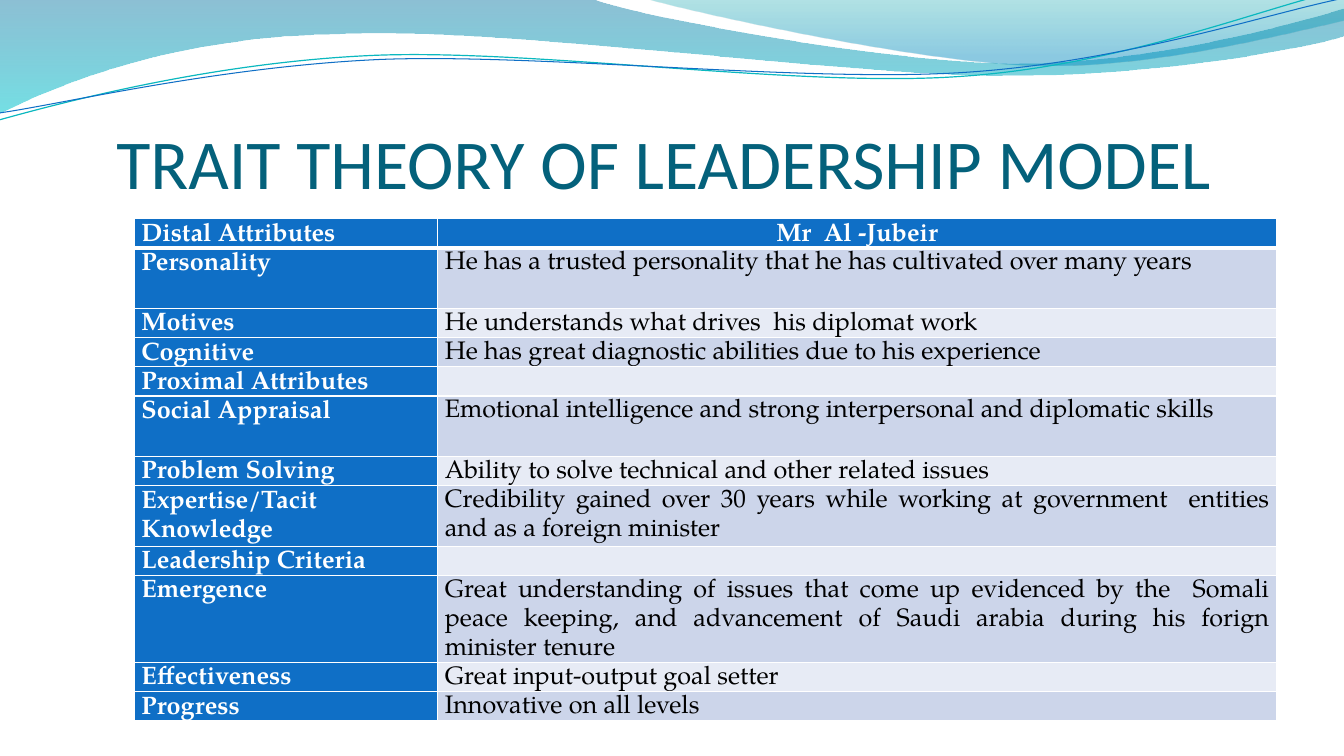
from lxml.etree import SubElement
from pptx import Presentation
from pptx.dml.color import RGBColor
from pptx.enum.text import MSO_ANCHOR, PP_ALIGN
from pptx.oxml.ns import qn
from pptx.util import Inches, Pt

WIDE, HIGH = Inches(13.333), Inches(7.5)
BLUE, WHITE, BLACK = "0F6FC6", "FFFFFF", "000000"
BANDS = ["E7EBF5", "CCD5EA"]


def tint(color, code):
    color.rgb = RGBColor.from_string(code)


def bend(wave, parts):
    """Join each three line steps that stand for a Bézier part into one curve."""
    steps = iter(list(wave.element.iter(qn("a:lnTo"))))
    for part in parts:
        first = next(steps)
        if len(part) == 6:
            first.tag = qn("a:cubicBezTo")
            for other in (next(steps), next(steps)):
                first.append(other[0])
                other.getparent().remove(other)


deck = Presentation()
deck.slide_width, deck.slide_height = WIDE, HIGH
slide = deck.slides.add_slide(deck.slide_layouts[6])
shapes = slide.shapes

# Waves: start, parts, gradient stops (place, colour, opacity) or line (colour, width)
waves = [
    ((0, 0), [(5.87, -0.01), (6.34, 0.17, 8.85, 0.63, 10.11, 0.63),
              (11.38, 0.63, 12.78, 0.26, 13.33, 0.09), (13.35, 0.36),
              (13.11, 0.44, 11.6, 0.76, 9.94, 0.75), (8.29, 0.75, 5.09, 0.28, 3.43, 0.34),
              (1.72, 0.36, 0.61, 0.83, -0.01, 1.13)],
     [(0, "0074A1", 45), (1, "00C6CF", 55)], None),
    ((6.39, -0.01), [(6.79, 0.11, 9.09, 0.62, 10.25, 0.65),
                     (11.41, 0.69, 12.82, 0.32, 13.33, 0.21), (13.33, 0)],
     [(0, "00A1A9", 30), (0.8, "008BBF", 45)], None),
    ((-0.01, 1.19), [(0.64, 1.01, 2.11, 0.62, 3.69, 0.55), (5.27, 0.48, 7.9, 0.87, 9.5, 0.76),
                     (11.1, 0.66, 12.52, 0.08, 13.31, -0.1)], None, ("0AB8BF", 0.85)),
    ((0, 1.12), [(0.63, 1.03, 2.18, 0.66, 3.78, 0.59), (5.37, 0.53, 7.96, 0.82, 9.55, 0.72),
                 (11.15, 0.62, 12.55, 0.14, 13.34, -0.02)], None, (BLUE, 0.75)),
]
for start, parts, stops, line in waves:
    pen = shapes.build_freeform(Inches(start[0]), Inches(start[1]), scale=1.0)
    spots = [(Inches(x), Inches(y)) for part in parts for x, y in zip(part[::2], part[1::2])]
    pen.add_line_segments(spots, close=bool(stops))
    wave = pen.convert_to_shape()
    bend(wave, parts)
    wave.shadow.inherit = False
    if stops:
        wave.line.fill.background()
        wave.fill.gradient()
        wave.fill.gradient_angle = 270
        for stop, (place, code, part) in zip(wave.fill.gradient_stops, stops):
            stop.position = place
            tint(stop.color, code)
        marks = wave.element.spPr.iter(qn("a:srgbClr"))
        for mark, (place, code, part) in zip(marks, stops):
            SubElement(mark, qn("a:alpha"), val=str(part * 1000))
    else:
        wave.fill.background()
        tint(wave.line.color, line[0])
        wave.line.width = Pt(line[1])

# Title
title = shapes.add_textbox(int(WIDE * 0.05), int(HIGH * 0.103), int(WIDE * 0.9), int(HIGH / 6))
frame = title.text_frame
frame.word_wrap = True
frame.vertical_anchor = MSO_ANCHOR.BOTTOM
frame.margin_left = frame.margin_right = frame.margin_bottom = 0
frame.text = "TRAIT THEORY OF LEADERSHIP MODEL "
frame.paragraphs[0].alignment = PP_ALIGN.CENTER
font = frame.paragraphs[0].runs[0].font
font.name, font.size = "Calibri", Pt(50)
tint(font.color, "04617B")

# Table: height in inches, attribute, finding
ONE, TWO, THREE = 0.29, 0.6, 0.86
rows = [
    (ONE, "Distal Attributes", "Mr  Al -Jubeir"),
    (TWO, "Personality", "He has a trusted personality that he has cultivated over many years"),
    (ONE, "Motives", "He understands what drives  his diplomat work"),
    (ONE, "Cognitive", "He has great diagnostic abilities due to his experience"),
    (ONE, "Proximal Attributes", ""),
    (TWO, "Social Appraisal",
     "Emotional intelligence and strong interpersonal and diplomatic skills"),
    (ONE, "Problem Solving", "Ability to solve technical and other related issues"),
    (TWO, "Expertise/Tacit Knowledge",
     "Credibility gained over 30 years while working at government  entities "
     "and as a foreign minister"),
    (ONE, "Leadership Criteria", ""),
    (THREE, "Emergence",
     "Great understanding of issues that come up evidenced by the  Somali peace keeping, "
     "and advancement of Saudi arabia during his forign minister tenure"),
    (ONE, "Effectiveness", "Great input-output goal setter"),
    (ONE, "Progress", "Innovative on all levels"),
]
tall = Inches(sum(row[0] for row in rows))
grid = shapes.add_table(len(rows), 2, int(WIDE * 0.1), Inches(2.17), int(WIDE * 0.85), tall).table
grid.horz_banding = False
grid.columns[0].width, grid.columns[1].width = Inches(3.01), Inches(8.32)

for r, (height, *texts) in enumerate(rows):
    grid.rows[r].height = Inches(height)
    for c, text in enumerate(texts):
        cell = grid.cell(r, c)
        head = r == 0 or c == 0
        cell.margin_left = cell.margin_right = Inches(0.07)
        cell.margin_top = cell.margin_bottom = 0
        props = cell._tc.get_or_add_tcPr()
        for side in "LRTB":
            thick = 3 if (r, side) in ((0, "B"), (1, "T")) else 1
            edge = SubElement(props, qn("a:ln" + side), w=str(Pt(thick)))
            SubElement(SubElement(edge, qn("a:solidFill")), qn("a:srgbClr"), val=WHITE)
        cell.fill.solid()
        tint(cell.fill.fore_color, BLUE if head else BANDS[r % 2])
        cell.text_frame.text = text
        para = cell.text_frame.paragraphs[0]
        if not text:
            SubElement(para._p, qn("a:endParaRPr"), sz="1200")
            continue
        para.alignment = PP_ALIGN.CENTER if r == 0 and c else PP_ALIGN.JUSTIFY
        para.line_spacing = Pt(20.7)
        font = para.runs[0].font
        font.name, font.size, font.bold = "TeX Gyre Pagella", Pt(18), head
        tint(font.color, WHITE if head else BLACK)

deck.save("out.pptx")
